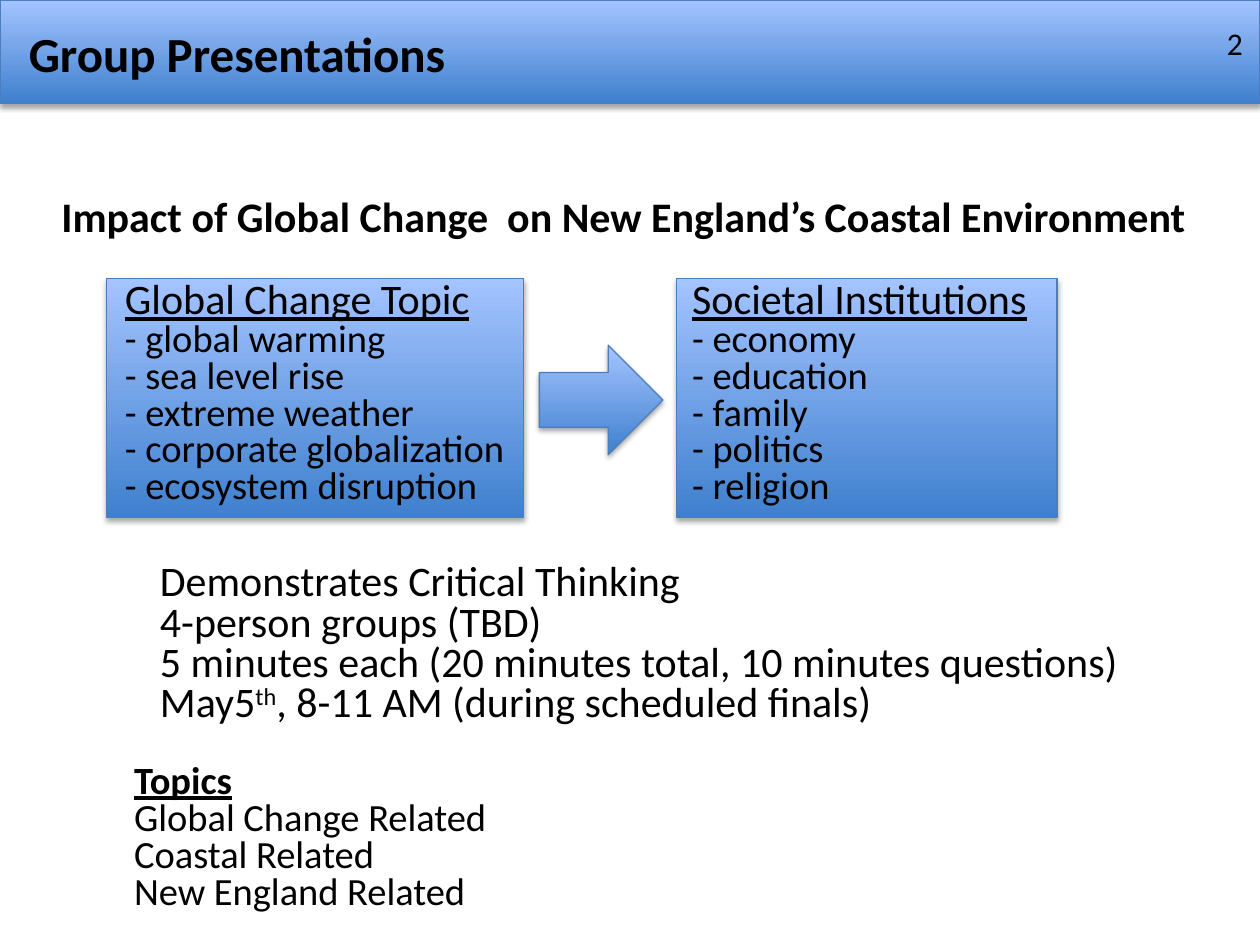
import pptx
import pptx.dml.color
import pptx.enum.shapes
import pptx.enum.text
import pptx.oxml
import pptx.oxml.ns
import pptx.util

Pt = pptx.util.Pt
SHAPE = pptx.enum.shapes.MSO_SHAPE
ALIGN = pptx.enum.text.PP_ALIGN
ANCHOR = pptx.enum.text.MSO_ANCHOR
GROW = pptx.enum.text.MSO_AUTO_SIZE.SHAPE_TO_FIT_TEXT

SHADOW = (
    '<a:outerShdw %s blurRad="%d" dist="%d" dir="5400000" rotWithShape="0">'
    '<a:srgbClr val="000000"><a:alpha val="35000"/></a:srgbClr></a:outerShdw>'
    % (pptx.oxml.ns.nsdecls("a"), Pt(3.1), Pt(1.8))
)


def color(value):
    return pptx.dml.color.RGBColor.from_string(value)


def apply(obj, values):
    for name, value in values.items():
        setattr(obj, name, value)


class Deck:
    font = "Calibri"
    text_color = "000000"
    line_color = "4B7EBC"
    gradient = ("3F80CE", "A4C4FF")

    def __init__(self, width, height):
        self.prs = pptx.Presentation()
        apply(self.prs, {"slide_width": Pt(width), "slide_height": Pt(height)})
        self.s = None

    def add_slide(self):
        self.s = self.prs.slides.add_slide(self.prs.slide_layouts[6])

    def shape(self, kind, *box):
        sp = self.s.shapes.add_shape(kind, *map(Pt, box))
        sp.fill.gradient()
        sp.fill.gradient_angle = 90
        for stop, value in zip(sp.fill.gradient_stops, self.gradient):
            stop.color.rgb = color(value)
        sp.line.color.rgb = color(self.line_color)
        sp.line.width = Pt(0.75)
        sp.shadow.inherit = False
        effects = sp._element.spPr.find(pptx.oxml.ns.qn("a:effectLst"))
        effects.append(pptx.oxml.parse_xml(SHADOW))
        return sp

    def fill_text(self, sp, paragraphs, size, spacing=0.8, align=ALIGN.LEFT, **frame):
        tf = sp.text_frame
        apply(tf, {"word_wrap": True, "vertical_anchor": ANCHOR.TOP, **frame})
        for i, runs in enumerate(paragraphs):
            p = tf.paragraphs[0] if i == 0 else tf.add_paragraph()
            apply(p, {"line_spacing": spacing, "alignment": align})
            for text, fmt in [(runs, {})] if isinstance(runs, str) else runs:
                r = p.add_run()
                r.text = text
                apply(r.font, {"name": self.font, "size": Pt(size), **fmt})
                r.font.color.rgb = color(self.text_color)
        return sp

    def text(self, box, paragraphs, size, **options):
        sp = self.s.shapes.add_textbox(*map(Pt, box))
        return self.fill_text(sp, paragraphs, size, **options)

    def list_box(self, box, heading, items, inset):
        sp = self.shape(SHAPE.RECTANGLE, *box)
        title = [(heading, {"size": Pt(24), "underline": True})]
        lines = [title] + [f"- {item}" for item in items]
        self.fill_text(sp, lines, 22, word_wrap=False,
                       margin_left=Pt(inset), margin_top=Pt(2.3))


def main():
    deck = Deck(720, 540)
    deck.add_slide()
    bold = {"bold": True}

    deck.list_box((61, 159, 238.3, 136.8), "Global Change Topic",
                  ["global warming", "sea level rise", "extreme weather",
                   "corporate globalization", "ecosystem disruption"], 10.4)
    deck.list_box((386.5, 159, 217.5, 136.8), "Societal Institutions",
                  ["economy", "education", "family", "politics", "religion"], 9)
    deck.shape(SHAPE.RECTANGLE, 0, 0, 720, 59)
    deck.text((9.4, 10, 700, 41), [[("Group Presentations", bold)]], 28,
              spacing=1, auto_size=GROW)
    deck.text((549.4, 10, 167.8, 28.8), ["2"], 18, spacing=1,
              align=ALIGN.RIGHT, vertical_anchor=ANCHOR.MIDDLE)
    deck.text((28, 111, 666.7, 31),
              [[("Impact of Global Change  on New England’s Coastal Environment", bold)]],
              24, word_wrap=False, auto_size=GROW)
    deck.shape(SHAPE.RIGHT_ARROW, 308.2, 197.3, 70.6, 62.6)

    details = deck.text(
        (48.2, 319, 646.6, 101.5),
        ["Demonstrates Critical Thinking",
         "4-person groups (TBD)",
         "5 minutes each (20 minutes total, 10 minutes questions)",
         [("May5", {}), ("th", {}), (", 8-11 AM (during scheduled finals)", {})]],
        24, margin_left=Pt(43.2), auto_size=GROW)
    ordinal = details.text_frame.paragraphs[-1].runs[1]
    ordinal.font._element.set("baseline", "30000")

    deck.text((69.6, 433.4, 219, 93.6),
              [[("Topics", {"bold": True, "underline": True})],
               "Global Change Related", "Coastal Related", "New England Related"],
              22, word_wrap=False, auto_size=GROW)
    deck.prs.save("out.pptx")


if __name__ == "__main__":
    main()
